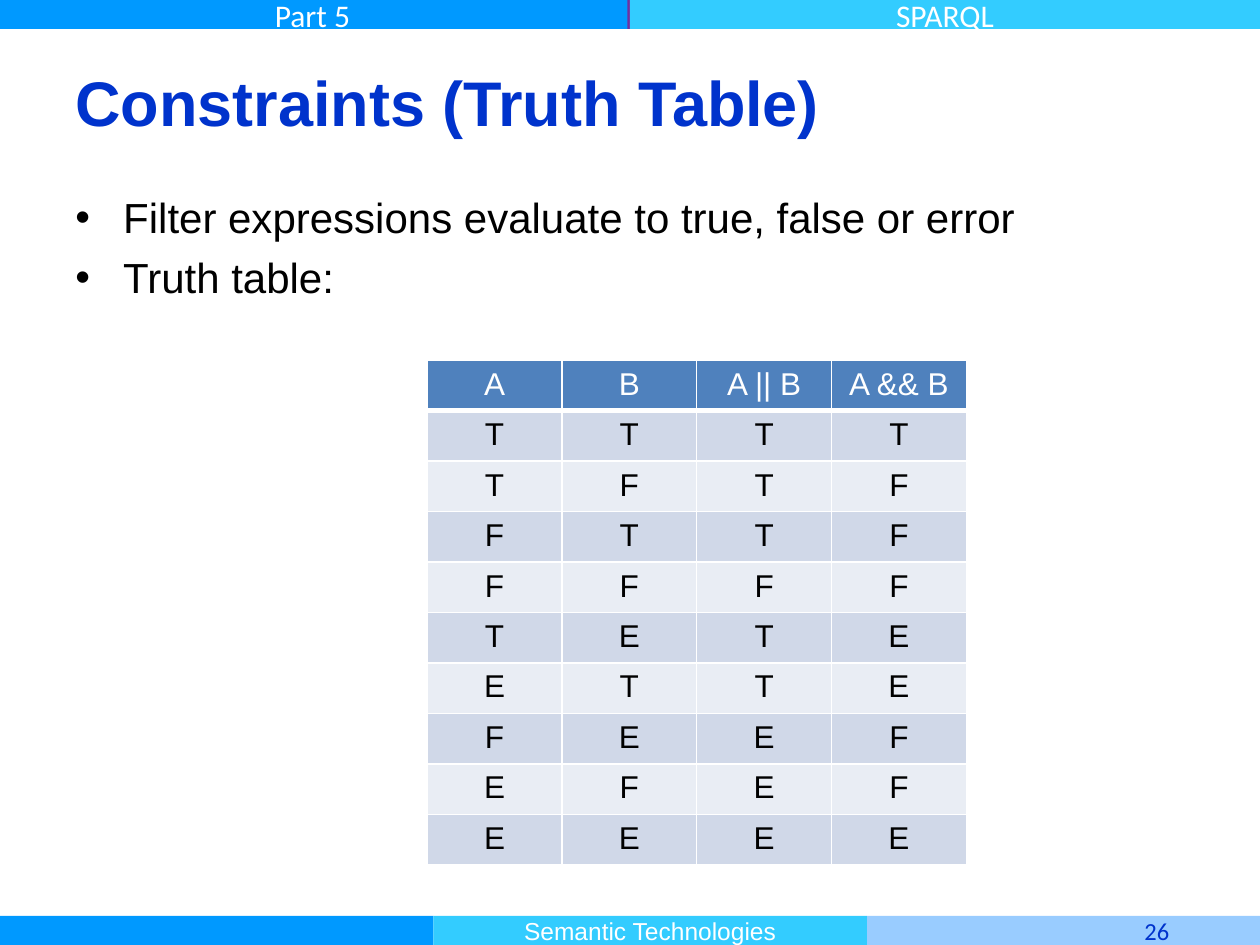
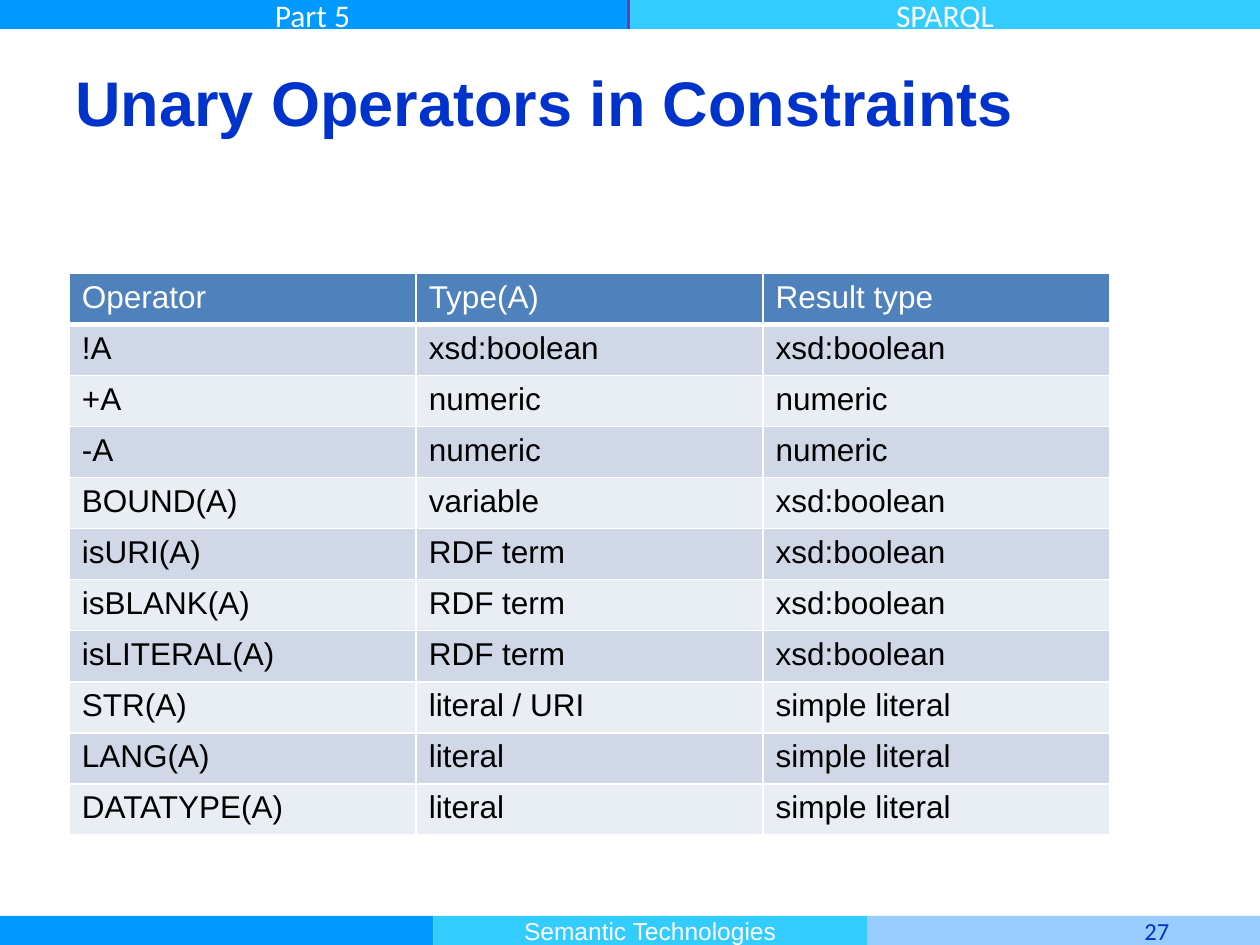
from lxml import etree
from pptx import Presentation
from pptx import util as u
from pptx.dml import color
from pptx.enum import shapes, text
from pptx.oxml import ns

COLORS = {
    "title": "0033CC",
    "body": "000000",
    "white": "FFFFFF",
    "purple": "7030A0",
    "blue": "0099FF",
    "cyan": "33CCFF",
    "pale": "99CCFF",
    "header": "4F81BD",
    "odd": "D0D8E8",
    "even": "E9EDF4",
}
LEFT, CENTER, RIGHT = text.PP_ALIGN.LEFT, text.PP_ALIGN.CENTER, text.PP_ALIGN.RIGHT

TRUTH = [("A", "B", "A || B", "A && B")] + [
    tuple(row) for row in "TTTT TFTF FTTF FFFF TETE ETTE FEEF EFEF EEEE".split()
]

OPERATORS = [
    ("Operator", "Type(A)", "Result type"),
    ("!A", "xsd:boolean", "xsd:boolean"),
    ("+A", "numeric", "numeric"),
    ("-A", "numeric", "numeric"),
    ("BOUND(A)", "variable", "xsd:boolean"),
    ("isURI(A)", "RDF term", "xsd:boolean"),
    ("isBLANK(A)", "RDF term", "xsd:boolean"),
    ("isLITERAL(A)", "RDF term", "xsd:boolean"),
    ("STR(A)", "literal / URI", "simple literal"),
    ("LANG(A)", "literal", "simple literal"),
    ("DATATYPE(A)", "literal", "simple literal"),
]


def rgb(name):
    return color.RGBColor.from_string(COLORS[name])


class Deck:
    def __init__(self):
        self.prs = Presentation()
        self.prs.slide_width, self.prs.slide_height = u.Inches(10), u.Inches(7.5)
        self.s = None

    def slide(self, title, number):
        self.s = self.prs.slides.add_slide(self.prs.slide_layouts[6])
        top, foot, third = 0, 7.27, 3.44
        self.band(0, top, 5, "purple")
        page = self.band(2 * third, foot, 10 - 2 * third, "pale")
        page.text_frame.margin_right = u.Inches(0.72)
        self.add_text(page.text_frame.paragraphs[0], str(number), 14, "title", "Calibri", RIGHT)
        self.band(0, foot, third, "blue")
        self.band(third, foot, third, "cyan", "Semantic Technologies", 14, "Arial")
        self.band(-0.02, top, 5, "blue", "Part 5", 18, "Calibri")
        self.band(5, top, 5, "cyan", "SPARQL", 18, "Calibri")
        tf = self.textbox(0.5, 0.3, 9, 1.01)
        tf.vertical_anchor = text.MSO_ANCHOR.MIDDLE
        self.add_text(tf.paragraphs[0], title, 36, "title").font.bold = True

    def add_text(self, p, words, size, ink, font="Arial", align=LEFT):
        p.alignment = align
        r = p.add_run()
        r.text = words
        r.font.size, r.font.name = u.Pt(size), font
        r.font.color.rgb = rgb(ink)
        return r

    def band(self, x, y, width, fill, words=None, size=None, font=None):
        sp = self.s.shapes.add_shape(
            shapes.MSO_SHAPE.RECTANGLE,
            u.Inches(x), u.Inches(y), u.Inches(width), u.Inches(0.23))
        sp.shadow.inherit = False
        sp.fill.solid()
        sp.fill.fore_color.rgb = rgb(fill)
        sp.line.fill.background()
        sp.text_frame.vertical_anchor = text.MSO_ANCHOR.MIDDLE
        if words:
            self.add_text(sp.text_frame.paragraphs[0], words, size, "white", font, CENTER)
        return sp

    def textbox(self, x, y, width, height):
        sp = self.s.shapes.add_textbox(
            u.Inches(x), u.Inches(y), u.Inches(width), u.Inches(height))
        sp.text_frame.word_wrap = True
        return sp.text_frame

    def bullets(self, items):
        tf = self.textbox(0.5, 1.47, 9, 5.23)
        for i, item in enumerate(items):
            p = tf.add_paragraph() if i else tf.paragraphs[0]
            p.space_before = u.Pt(5.5)
            self.add_text(p, item, 24, "body")
            pPr = p._p.get_or_add_pPr()
            pPr.set("marL", str(u.Inches(0.38)))
            pPr.set("indent", str(-u.Inches(0.38)))
            etree.SubElement(pPr, ns.qn("a:buFont")).set("typeface", "Arial")
            etree.SubElement(pPr, ns.qn("a:buChar")).set("char", "•")

    def table(self, x, y, width, height, rows, align):
        frame = self.s.shapes.add_table(
            len(rows), len(rows[0]),
            u.Inches(x), u.Inches(y), u.Inches(width), u.Inches(height))
        for i, row in enumerate(rows):
            fill = "odd" if i % 2 else "even"
            for j, words in enumerate(row):
                cell = frame.table.cell(i, j)
                cell.fill.solid()
                cell.fill.fore_color.rgb = rgb(fill if i else "header")
                self.add_text(cell.text_frame.paragraphs[0], words, 18,
                              "body" if i else "white", align=align)
                self.borders(cell, 1 if i else 3)

    def borders(self, cell, bottom):
        tcPr = cell._tc.get_or_add_tcPr()
        for i, (side, width) in enumerate(zip("LRTB", (1, 1, 1, bottom))):
            ln = etree.Element(ns.qn(f"a:ln{side}"), w=str(u.Pt(width)))
            fill = etree.SubElement(ln, ns.qn("a:solidFill"))
            etree.SubElement(fill, ns.qn("a:srgbClr")).set("val", COLORS["white"])
            tcPr.insert(i, ln)


def main():
    deck = Deck()
    deck.slide("Constraints (Truth Table)", 26)
    deck.bullets(["Filter expressions evaluate to true, false or error", "Truth table:"])
    deck.table(3.39, 2.86, 4.28, 3.94, TRUTH, CENTER)
    deck.slide("Unary Operators in Constraints", 27)
    deck.table(0.55, 2.17, 8.26, 4.46, OPERATORS, LEFT)
    deck.prs.save("out.pptx")


if __name__ == "__main__":
    main()
